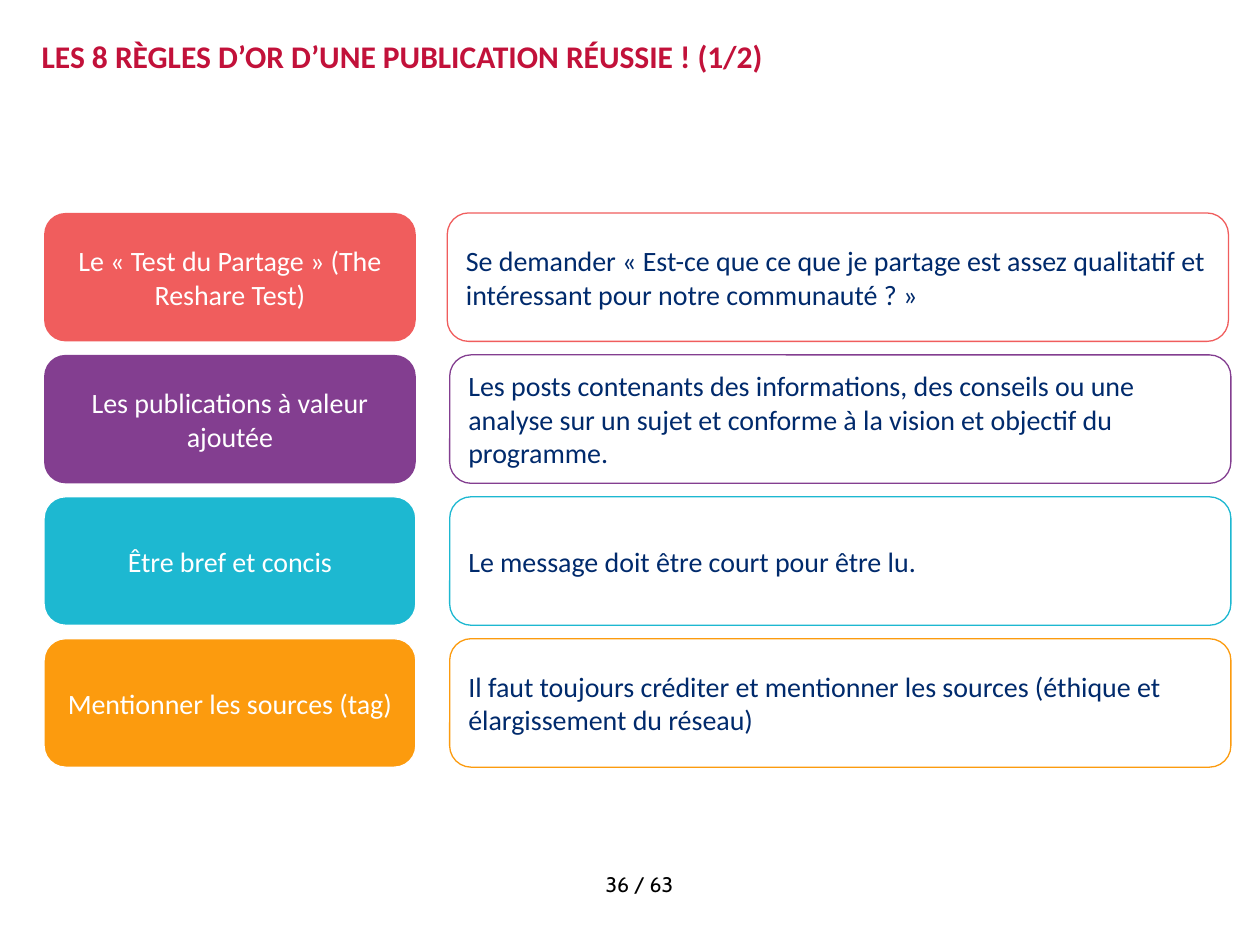
"""Builds the slide on the first four golden rules of a successful post."""
from pptx import Presentation
from pptx.dml.color import RGBColor as Color
from pptx.enum.shapes import MSO_SHAPE as Shape
from pptx.enum.text import MSO_ANCHOR as Anchor, MSO_AUTO_SIZE as AutoSize, PP_ALIGN as Align
from pptx.util import Pt

TITLE = "LES 8 RÈGLES D’OR D’UNE PUBLICATION RÉUSSIE ! (1/2)"
PAGE_NUMBER = "36 / 63"
RULES = [
    {"name": "Le « Test du Partage » (The Reshare Test)",
     "advice": "Se demander « Est-ce que ce que je partage est assez qualitatif et "
               "intéressant pour notre communauté ? »",
     "color": "F05D5D", "outline": None, "advice_left": 255.6},
    {"name": "Les publications à valeur ajoutée",
     "advice": "Les posts contenants des informations, des conseils ou une analyse sur "
               "un sujet et conforme à la vision et objectif du programme.",
     "color": "833E90", "outline": None, "advice_left": 257},
    {"name": "Être bref et concis",
     "advice": "Le message doit être court pour être lu.",
     "color": "1DB8D1", "outline": "FFFFFF", "advice_left": 257},
    {"name": "Mentionner les sources (tag)",
     "advice": "Il faut toujours créditer et mentionner les sources (éthique et "
               "élargissement du réseau)",
     "color": "FC9B0E", "outline": "FFFFFF", "advice_left": 257},
]

THEME = {
    "font": "Calibri", "number_font": "Cabin",
    "title": "C2113A", "name": "FFFFFF", "advice": "002A6C", "number": "000000",
    "title_size": 18, "body_size": 16, "number_size": 12, "line": 0.75,
}

NAME_LEFT, NAME_WIDTH, ADVICE_WIDTH = 25.2, 212.4, 446.4
FIRST_TOP, CARD_HEIGHT, ROW_PITCH = 121.7, 73.4, 81.1


def write(frame, text, color, size, font=THEME["font"], align=Align.LEFT, bold=False):
    frame.word_wrap = True
    frame.text = text
    para = frame.paragraphs[0]
    para.alignment = align
    for span in para.runs:
        span.font.name = font
        span.font.size = Pt(size)
        span.font.bold = bold
        span.font.color.rgb = Color.from_string(color)


def add_card(page, left, top, width, fill, outline):
    card = page.shapes.add_shape(
        Shape.ROUNDED_RECTANGLE, Pt(left), Pt(top), Pt(width), Pt(CARD_HEIGHT))
    card.shadow.inherit = False
    if fill:
        card.fill.solid()
        card.fill.fore_color.rgb = Color.from_string(fill)
    else:
        card.fill.background()
    if outline:
        card.line.color.rgb = Color.from_string(outline)
        card.line.width = Pt(THEME["line"])
    else:
        card.line.fill.background()
    card.text_frame.vertical_anchor = Anchor.MIDDLE
    return card.text_frame


def add_rule(page, row, rule):
    top = FIRST_TOP + row * ROW_PITCH
    name = add_card(page, NAME_LEFT, top, NAME_WIDTH, rule["color"], rule["outline"])
    write(name, rule["name"], THEME["name"], THEME["body_size"], align=Align.CENTER)
    advice = add_card(page, rule["advice_left"], top, ADVICE_WIDTH, None, rule["color"])
    write(advice, rule["advice"], THEME["advice"], THEME["body_size"])


def add_title(page):
    frame = page.shapes.add_textbox(Pt(23.8), Pt(20.9), Pt(671.8), Pt(54.7)).text_frame
    frame.margin_left = frame.margin_right = frame.margin_top = frame.margin_bottom = 0
    write(frame, TITLE, THEME["title"], THEME["title_size"], bold=True)


def add_page_number(page):
    frame = page.shapes.add_textbox(Pt(315.4), Pt(494.6), Pt(100), Pt(22.3)).text_frame
    write(frame, PAGE_NUMBER, THEME["number"], THEME["number_size"],
          THEME["number_font"], Align.CENTER)
    frame.auto_size = AutoSize.SHAPE_TO_FIT_TEXT


def main():
    deck = Presentation()
    deck.slide_width, deck.slide_height = Pt(720), Pt(540)
    page = deck.slides.add_slide(deck.slide_layouts[6])
    for row, rule in enumerate(RULES):
        add_rule(page, row, rule)
    add_title(page)
    add_page_number(page)
    deck.save("out.pptx")


if __name__ == "__main__":
    main()
